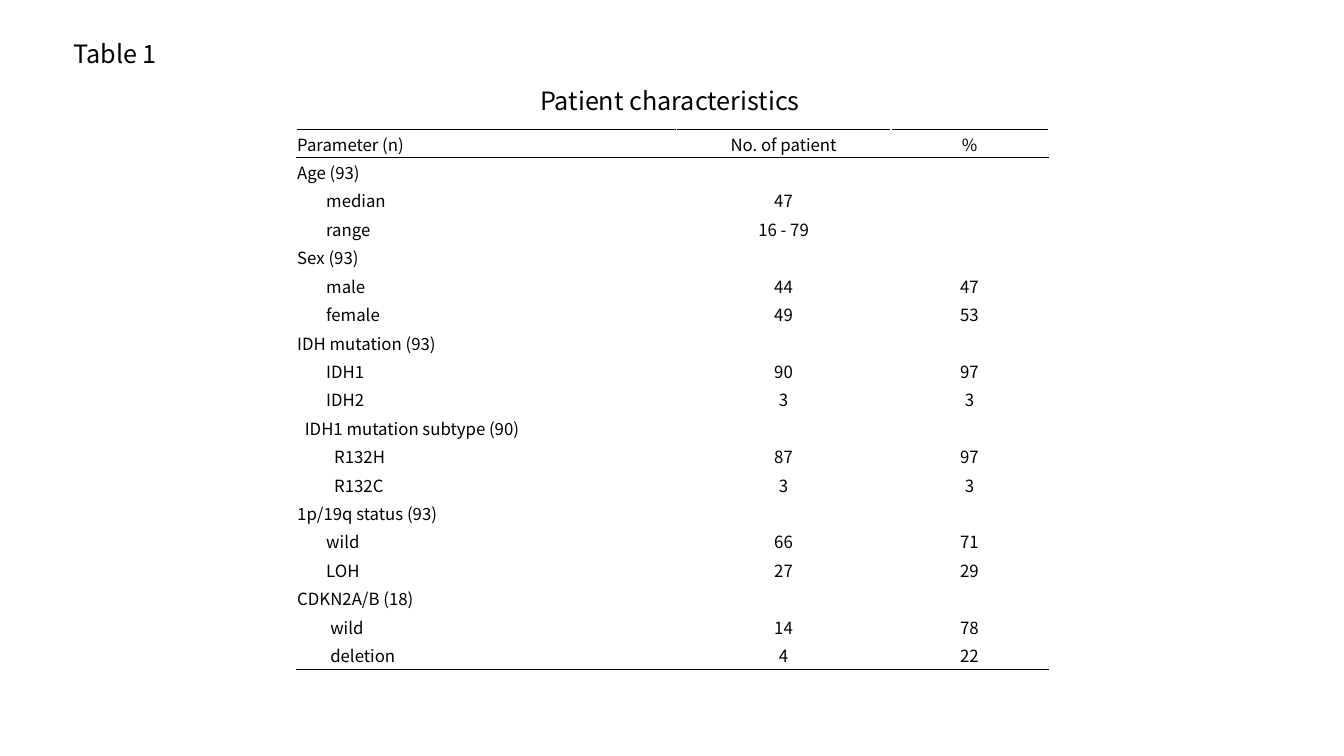
import dataclasses

import pptx
import pptx.dml.color
import pptx.enum.text
import pptx.oxml
import pptx.oxml.ns
import pptx.util

Pt = pptx.util.Pt
PP_ALIGN = pptx.enum.text.PP_ALIGN


@dataclasses.dataclass(frozen=True)
class Theme:
    font: str = "Noto Sans CJK JP"
    ink: str = "000000"
    title_size: float = 18
    body_size: float = 12
    rule_width: float = 0.5
    subgroup: float = 5.4
    item: float = 20.7
    wide_item: float = 23.6
    subitem: float = 26.4


THEME = Theme()
COLUMN_WIDTHS = (271.44, 153.36, 112.32)
ROW_HEIGHT = 20.32
ROWS = [
    (0, "Parameter (n)", "No. of patient", "%"),
    (0, "Age (93)", "", ""),
    (THEME.item, "median", "47", ""),
    (THEME.item, "range", "16 - 79", ""),
    (0, "Sex (93)", "", ""),
    (THEME.item, "male", "44", "47"),
    (THEME.item, "female", "49", "53"),
    (0, "IDH mutation (93)", "", ""),
    (THEME.item, "IDH1", "90", "97"),
    (THEME.item, "IDH2", "3", "3"),
    (THEME.subgroup, "IDH1 mutation subtype (90)", "", ""),
    (THEME.subitem, "R132H", "87", "97"),
    (THEME.subitem, "R132C", "3", "3"),
    (0, "1p/19q status (93)", "", ""),
    (THEME.item, "wild", "66", "71"),
    (THEME.item, "LOH", "27", "29"),
    (0, "CDKN2A/B (18)", "", ""),
    (THEME.wide_item, "wild", "14", "78"),
    (THEME.wide_item, "deletion", "4", "22"),
]


def write(p, text, size):
    p.text = text
    for r in p.runs:
        r.font.name = THEME.font
        r.font.size = Pt(size)
        r.font.color.rgb = pptx.dml.color.RGBColor.from_string(THEME.ink)
    if not text:
        end = pptx.oxml.parse_xml(
            f'<a:endParaRPr {pptx.oxml.ns.nsdecls("a")} sz="{int(size * 100)}"/>')
        p._p.append(end)


def add_label(s, text, left, top, width, height):
    box = s.shapes.add_textbox(Pt(left), Pt(top), Pt(width), Pt(height))
    tf = box.text_frame
    tf.word_wrap = False
    tf.auto_size = pptx.enum.text.MSO_AUTO_SIZE.SHAPE_TO_FIT_TEXT
    write(tf.paragraphs[0], text, THEME.title_size)


def add_rules(cell, edges):
    tc_pr = cell._tc.get_or_add_tcPr()
    for i, edge in enumerate(edges):
        line = pptx.oxml.parse_xml(
            f'<a:ln{edge} {pptx.oxml.ns.nsdecls("a")} w="{Pt(THEME.rule_width)}">'
            f'<a:solidFill><a:srgbClr val="{THEME.ink}"/></a:solidFill></a:ln{edge}>')
        tc_pr.insert(i, line)


def fill_cell(cell, text, column, indent):
    cell.fill.background()
    cell.vertical_anchor = pptx.enum.text.MSO_ANCHOR.MIDDLE
    cell.margin_left = cell.margin_right = cell.margin_top = Pt(0.72)
    cell.margin_bottom = Pt(0)
    p = cell.text_frame.paragraphs[0]
    write(p, text, THEME.body_size)
    if column:
        p.alignment = PP_ALIGN.CENTER
    elif indent:
        p._p.get_or_add_pPr().set("marL", str(Pt(indent)))


def add_patient_table(s, left, top):
    frame = s.shapes.add_table(
        len(ROWS), len(COLUMN_WIDTHS), Pt(left), Pt(top),
        Pt(sum(COLUMN_WIDTHS)), Pt(ROW_HEIGHT * len(ROWS)))
    table = frame.table
    table.first_row = table.horz_banding = False
    for column, width in zip(table.columns, COLUMN_WIDTHS):
        column.width = Pt(width)
    edges = {0: "TB", 1: "T", len(ROWS) - 1: "B"}
    for i, (indent, *texts) in enumerate(ROWS):
        table.rows[i].height = Pt(ROW_HEIGHT)
        for j, text in enumerate(texts):
            cell = table.cell(i, j)
            fill_cell(cell, text, j, indent)
            add_rules(cell, edges.get(i, ""))


def main():
    prs = pptx.Presentation()
    prs.slide_width, prs.slide_height = Pt(960), Pt(540)
    s = prs.slides.add_slide(prs.slide_layouts[6])
    add_patient_table(s, 211.6, 92.2)
    add_label(s, "Table 1", 45.4, 23.8, 77, 29)
    add_label(s, "Patient characteristics", 378.7, 57.6, 203, 29)
    prs.save("out.pptx")


if __name__ == "__main__":
    main()
